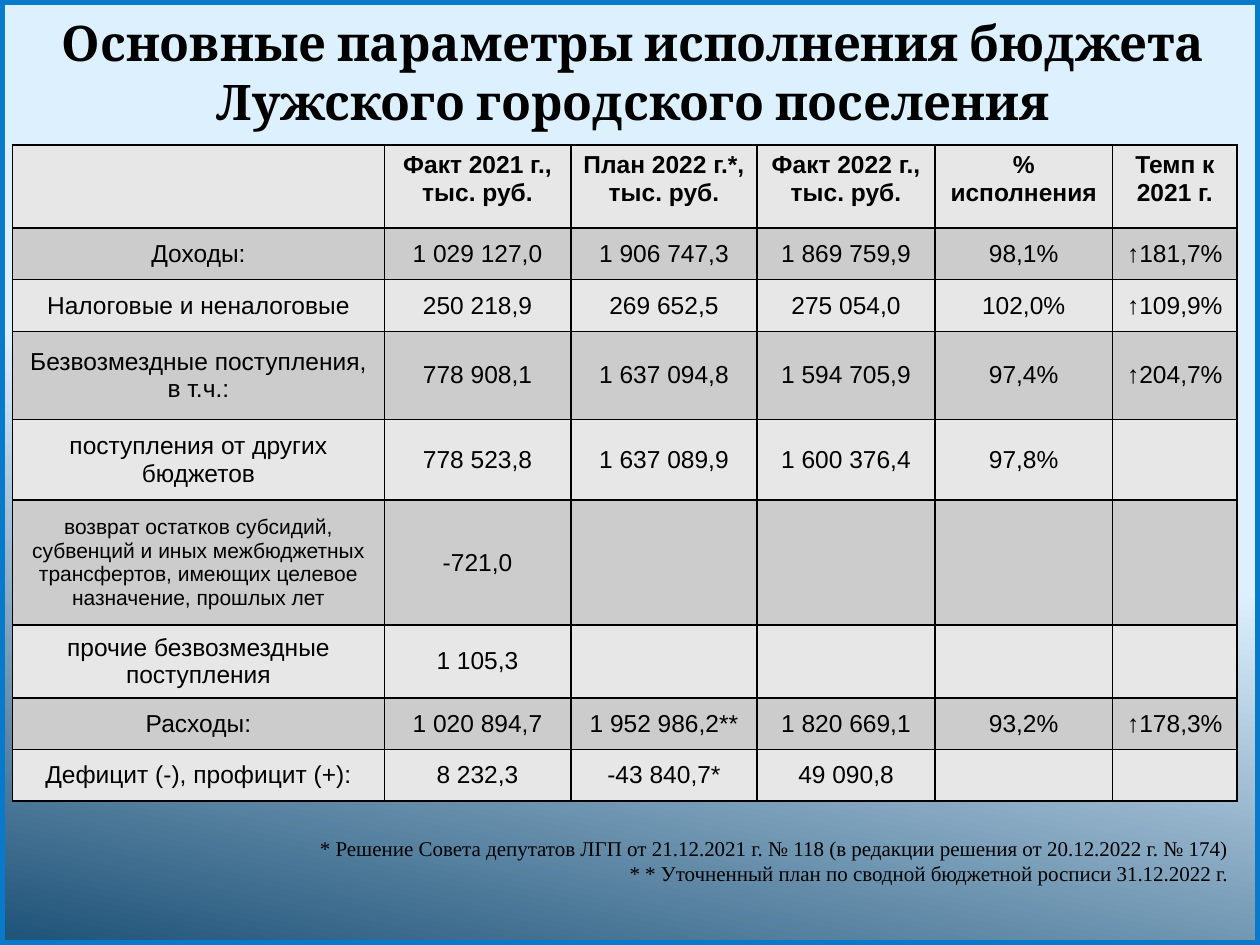
from dataclasses import dataclass

from lxml.etree import SubElement
from pptx import Presentation
from pptx.dml.color import RGBColor
from pptx.enum.shapes import MSO_SHAPE as Shape
from pptx.enum.text import MSO_ANCHOR as Anchor, MSO_AUTO_SIZE as AutoSize, PP_ALIGN as Align
from pptx.oxml.ns import qn
from pptx.util import Inches, Pt

TITLE = "Основные параметры исполнения бюджета\nЛужского городского поселения"
COLUMN_WIDTHS = [2.95, 1.48, 1.48, 1.41, 1.41, 0.99]
ROW_HEIGHTS = [0.66, 0.41, 0.41, 0.7, 0.64, 0.99, 0.58, 0.41, 0.41]
BUDGET_ROWS = [
    ["", "Факт 2021 г., тыс. руб.", "План 2022 г.*, тыс. руб.", "Факт 2022 г., тыс. руб.",
     "%\nисполнения", "Темп к 2021 г."],
    ["Доходы:", "1 029 127,0", "1 906 747,3", "1 869 759,9", "98,1%", "↑181,7%"],
    ["Налоговые и неналоговые", "250 218,9", "269 652,5", "275 054,0", "102,0%", "↑109,9%"],
    ["Безвозмездные поступления,\nв т.ч.:", "778 908,1", "1 637 094,8", "1 594 705,9",
     "97,4%", "↑204,7%"],
    ["поступления от других бюджетов", "778 523,8", "1 637 089,9", "1 600 376,4", "97,8%", ""],
    ["возврат остатков субсидий, субвенций и иных межбюджетных трансфертов, "
     "имеющих целевое назначение, прошлых лет", "-721,0", "", "", "", ""],
    ["прочие безвозмездные поступления", "1 105,3", "", "", "", ""],
    ["Расходы:", "1 020 894,7", "1 952 986,2**", "1 820 669,1", "93,2%", "↑178,3%"],
    ["Дефицит (-), профицит (+):", "8 232,3", "-43 840,7*", "49 090,8", "", ""],
]
REFUND_CELL = (5, 0)
FOOTNOTES = (
    "* Решение Совета депутатов ЛГП от 21.12.2021 г. № 118 (в редакции решения от 20.12.2022 г. № 174)\n"
    "* * Уточненный план по сводной бюджетной росписи 31.12.2022 г."
)


@dataclass(frozen=True)
class Theme:
    """Colours, fonts and type sizes of the slide."""

    ink: str = "000000"
    sky: str = "DDF0FE"
    deep: str = "1E5278"
    frame: str = "077ACC"
    bands: tuple = ("E7E7E7", "CCCCCC")
    title_font: str = "Cambria"
    table_font: str = "Arial"
    note_font: str = "Times New Roman"
    title_size: int = 28
    table_size: int = 14
    small_size: int = 12


class SlideBuilder:
    """Draws styled elements on the current slide."""

    def __init__(self, slide, theme):
        """Keep the slide and its theme."""
        self.slide = slide
        self.theme = theme

    def set_text(self, frame, text, font, size, align, bold=False):
        """Fill a text frame with uniformly styled paragraphs."""
        frame.text = text
        for paragraph in frame.paragraphs:
            paragraph.alignment = align
            paragraph.font.name = font
            paragraph.font.size = Pt(size)
            paragraph.font.bold = bold
            paragraph.font.color.rgb = RGBColor.from_string(self.theme.ink)

    def background(self):
        """Paint the gradient background."""
        fill = self.slide.background.fill
        fill.gradient()
        fill.gradient_angle = 258
        stops = [(0.49, self.theme.sky), (1, self.theme.deep)]
        for stop, (position, color) in zip(fill.gradient_stops, stops):
            stop.position = position
            stop.color.rgb = RGBColor.from_string(color)

    def title(self, text, left, top, width, height):
        """Place the slide title."""
        shape = self.slide.shapes.title
        shape.left, shape.top = Inches(left), Inches(top)
        shape.width, shape.height = Inches(width), Inches(height)
        frame = shape.text_frame
        frame.auto_size = AutoSize.NONE
        frame.vertical_anchor = Anchor.TOP
        self.set_text(frame, text, self.theme.title_font, self.theme.title_size, Align.CENTER, True)

    def borders(self, cell):
        """Outline all four sides of a cell."""
        properties = cell._tc.get_or_add_tcPr()
        for index, side in enumerate(("a:lnL", "a:lnR", "a:lnT", "a:lnB")):
            line = SubElement(properties, qn(side), w=str(Pt(1)))
            SubElement(SubElement(line, qn("a:solidFill")), qn("a:srgbClr"), val=self.theme.ink)
            properties.insert(index, line)

    def table(self, rows, left, top, widths, heights, small_cell):
        """Add a banded table with a bold header row."""
        theme = self.theme
        table = self.slide.shapes.add_table(
            len(rows), len(widths), Inches(left), Inches(top),
            Inches(sum(widths)), Inches(sum(heights))).table
        for column, width in zip(table.columns, widths):
            column.width = Inches(width)
        for row, height in zip(table.rows, heights):
            row.height = Inches(height)
        for row_index, values in enumerate(rows):
            header = row_index == 0
            for column_index, value in enumerate(values):
                cell = table.cell(row_index, column_index)
                size = theme.small_size if (row_index, column_index) == small_cell else theme.table_size
                self.set_text(cell.text_frame, value, theme.table_font, size, Align.CENTER, header)
                cell.vertical_anchor = Anchor.TOP if header else Anchor.MIDDLE
                cell.fill.solid()
                cell.fill.fore_color.rgb = RGBColor.from_string(theme.bands[row_index % 2])
                self.borders(cell)

    def footnotes(self, text, left, top, width, height):
        """Add right-aligned footnotes."""
        box = self.slide.shapes.add_textbox(Inches(left), Inches(top), Inches(width), Inches(height))
        box.text_frame.word_wrap = True
        self.set_text(box.text_frame, text, self.theme.note_font, self.theme.small_size, Align.RIGHT)

    def frame(self, width, height):
        """Outline the whole slide."""
        shape = self.slide.shapes.add_shape(Shape.RECTANGLE, 0, 0, width, height)
        shape.shadow.inherit = False
        shape.fill.background()
        shape.line.color.rgb = RGBColor.from_string(self.theme.frame)
        shape.line.width = Pt(6)


def main():
    """Build and save the budget slide."""
    presentation = Presentation()
    presentation.slide_width = Inches(10)
    presentation.slide_height = Inches(7.5)
    slide = presentation.slides.add_slide(presentation.slide_layouts.get_by_name("Title Only"))
    builder = SlideBuilder(slide, Theme())
    builder.background()
    builder.table(BUDGET_ROWS, 0.1, 1.15, COLUMN_WIDTHS, ROW_HEIGHTS, REFUND_CELL)
    builder.title(TITLE, 0.22, 0.05, 9.61, 1.04)
    builder.footnotes(FOOTNOTES, 0.12, 6.58, 9.73, 0.55)
    builder.frame(presentation.slide_width, presentation.slide_height)
    presentation.save("out.pptx")


if __name__ == "__main__":
    main()
